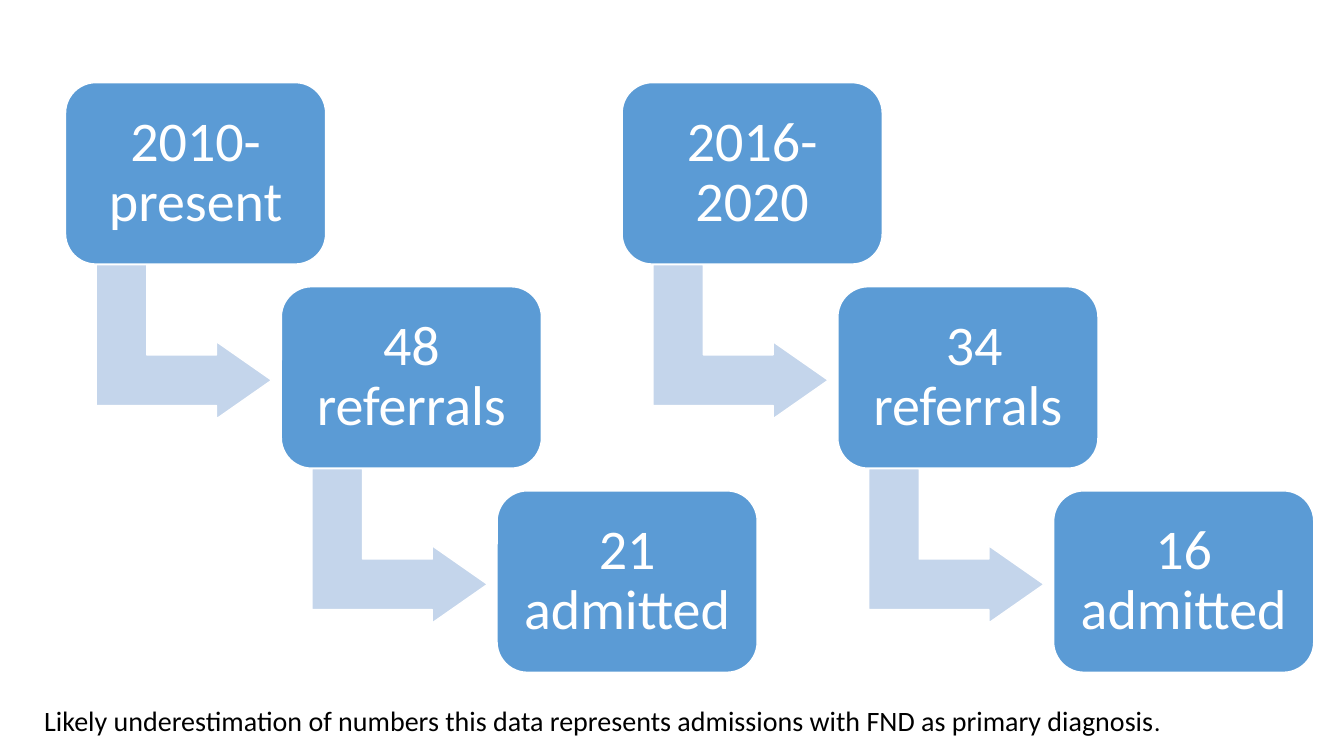
from pptx import Presentation
from pptx.dml.color import RGBColor
from pptx.enum import shapes, text
from pptx.util import Inches, Pt

FLOWS = [
    (6.17, ["2016-2020", " 34 referrals", "16 admitted"]),
    (0.65, ["2010-present", "48 referrals", "21 admitted"]),
]
NOTE = [
    ("Likely underestimation of numbers this data represents "
     "admissions with FND as primary diagnosis", 20),
    (".", 18),
]
COLORS = {"box": "5B9BD5", "arrow": "C4D5EB", "white": "FFFFFF", "black": "000000"}
FONT = "Calibri"
TOP = 0.82
STEP = (2.14, 2.025)
BOX = (2.58, 1.8)
ARROW = (1.53, 1.74)
SHIFT = (0.41, 1.7)  # arrow frame relative to its box


def color(name):
    return RGBColor.from_string(COLORS[name])


def style(run, size, name):
    run.font.name = FONT
    run.font.size = Pt(size)
    run.font.color.rgb = color(name)


def add_part(group, kind, left, top, size, fill, adjust):
    part = group.shapes.add_shape(
        kind, Inches(left), Inches(top), Inches(size[0]), Inches(size[1]))
    for i, value in enumerate(adjust):
        part.adjustments[i] = value
    part.shadow.inherit = False
    part.fill.solid()
    part.fill.fore_color.rgb = color(fill)
    part.line.color.rgb = color("white")
    part.line.width = Pt(1)
    return part


def add_box(group, left, top, label):
    box = add_part(group, shapes.MSO_SHAPE.ROUNDED_RECTANGLE,
                   left, top, BOX, "box", [0.167])
    frame = box.text_frame
    frame.word_wrap = True
    frame.vertical_anchor = text.MSO_ANCHOR.MIDDLE
    frame.margin_left = frame.margin_right = Inches(0.08)
    frame.margin_top = frame.margin_bottom = Inches(0.08)
    frame.text = label
    para = frame.paragraphs[0]
    para.alignment = text.PP_ALIGN.CENTER
    para.line_spacing = 0.9
    style(para.runs[0], 40, "white")


def add_flow(slide, left, labels):
    group = slide.shapes.add_group_shape()
    for i, label in enumerate(labels):
        x, y = left + i * STEP[0], TOP + i * STEP[1]
        if i < len(labels) - 1:
            arrow = add_part(group, shapes.MSO_SHAPE.BENT_UP_ARROW,
                             x + SHIFT[0], y + SHIFT[1], ARROW,
                             "arrow", [0.328, 0.25, 0.358])
            arrow.rotation = 90
        add_box(group, x, y, label)


def add_note(slide):
    box = slide.shapes.add_textbox(
        Inches(0.34), Inches(6.93), Inches(12.03), Inches(0.44))
    box.text_frame.word_wrap = True
    para = box.text_frame.paragraphs[0]
    for words, size in NOTE:
        run = para.add_run()
        run.text = words
        style(run, size, "black")


def main():
    deck = Presentation()
    deck.slide_width, deck.slide_height = Inches(13.33), Inches(7.5)
    slide = deck.slides.add_slide(deck.slide_layouts[6])
    for left, labels in FLOWS:
        add_flow(slide, left, labels)
    add_note(slide)
    deck.save("out.pptx")


if __name__ == "__main__":
    main()
